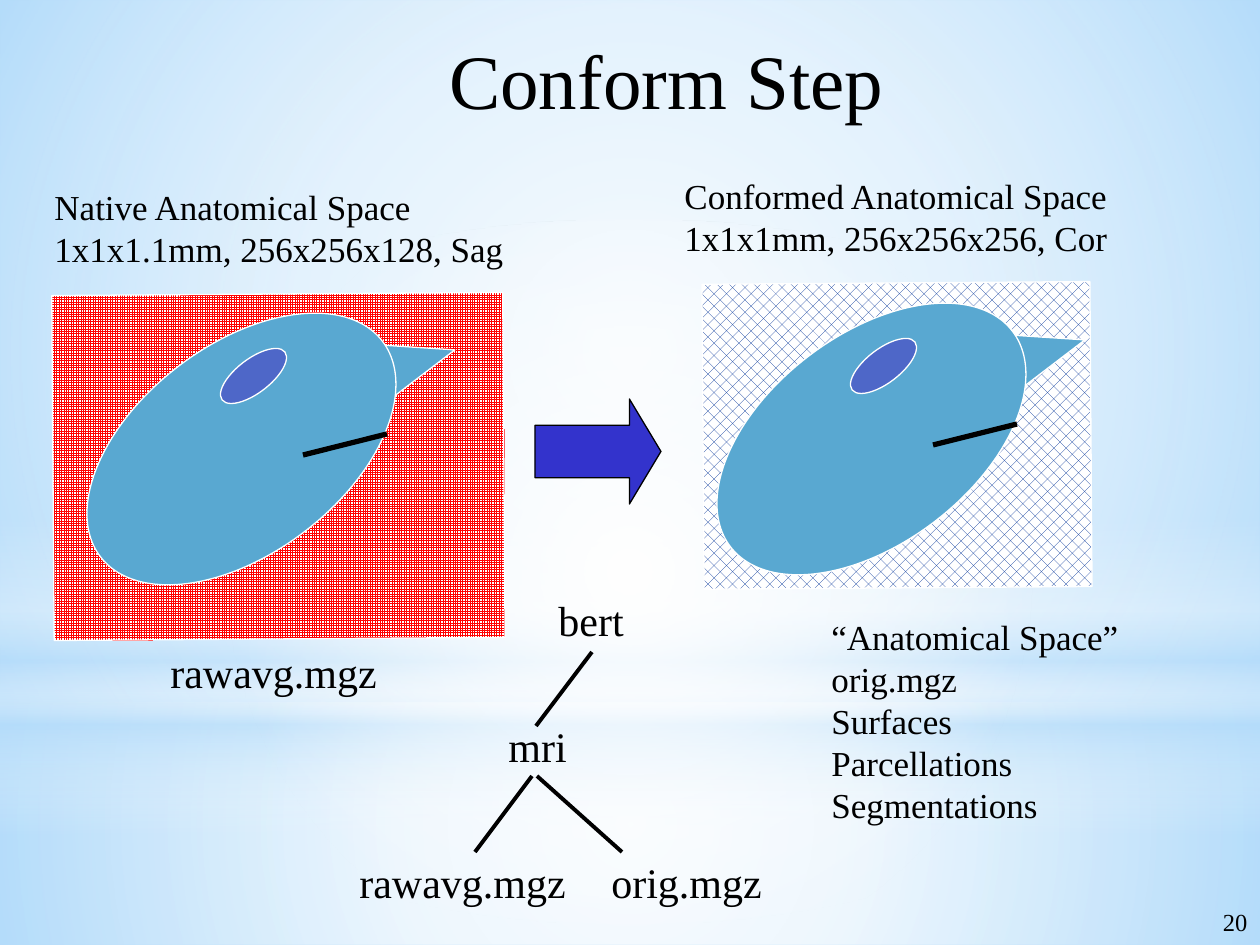
from lxml import etree
from pptx import Presentation
from pptx.dml.color import RGBColor
from pptx.enum.dml import MSO_PATTERN as Pattern
from pptx.enum.shapes import MSO_CONNECTOR as Connector, MSO_SHAPE as Shape
from pptx.enum.text import MSO_ANCHOR as Anchor, MSO_AUTO_SIZE as AutoSize, PP_ALIGN as Align
from pptx.oxml import parse_xml
from pptx.oxml.ns import nsdecls, qn
from pptx.util import Emu, Pt

FONT = "Times New Roman"
BLACK = RGBColor(0x00, 0x00, 0x00)
WHITE = RGBColor(0xFF, 0xFF, 0xFF)
SKY = RGBColor(0xB4, 0xDC, 0xFA)
RED = RGBColor(0xFF, 0x00, 0x00)
NAVY = RGBColor(0x00, 0x33, 0x99)
HEAD = RGBColor(0x59, 0xA8, 0xD1)
EYE = RGBColor(0x4E, 0x67, 0xC8)
ARROW = RGBColor(0x33, 0x33, 0xCC)

HEAD_TILT = 322.6
FRAME_TILT = 359.6
CIRCLE = ('<a:path path="circle"><a:fillToRect l="50000" t="50000" '
          'r="50000" b="50000"/></a:path>')
DOWNWARD = '<a:lin ang="5400000" scaled="0"/>'


def px(value):
    return Emu(round(value * 914400 / 126))


def box(*values):
    return [px(value) for value in values]


def add_plain_shape(shapes, kind, bounds, fill=None, line=None, rotation=0):
    shape = shapes.add_shape(kind, *box(*bounds))
    shape.shadow.inherit = False
    shape.rotation = rotation
    if fill is not None:
        shape.fill.solid()
        shape.fill.fore_color.rgb = fill
    if line is None:
        shape.line.fill.background()
    else:
        shape.line.color.rgb = line
        shape.line.width = Pt(0.75)
    return shape


def add_glow(slide, kind, bounds, stops, direction):
    shape = add_plain_shape(slide.shapes, kind, bounds)
    stop_xml = "".join(
        f'<a:gs pos="{position * 1000}"><a:srgbClr val="{color}">'
        f'<a:alpha val="{opacity * 1000}"/></a:srgbClr></a:gs>'
        for position, color, opacity in stops)
    gradient = parse_xml(f'<a:gradFill {nsdecls("a")} rotWithShape="1">'
                         f'<a:gsLst>{stop_xml}</a:gsLst>{direction}</a:gradFill>')
    shape._element.spPr.find(qn("a:prstGeom")).addnext(gradient)


def add_line(shapes, start, end, width, start_shape=None):
    line = shapes.add_connector(Connector.STRAIGHT, *box(*start, *end))
    line.line.color.rgb = BLACK
    line.line.width = Pt(width)
    etree.SubElement(line._element.spPr, qn("a:effectLst"))
    if start_shape is not None:
        line.begin_connect(start_shape, 2)


def add_text(slide, bounds, lines, size, align=Align.LEFT, wrap=True, grow=True,
             anchor=Anchor.TOP):
    text_box = slide.shapes.add_textbox(*box(*bounds))
    frame = text_box.text_frame
    frame.word_wrap = wrap
    frame.auto_size = AutoSize.SHAPE_TO_FIT_TEXT if grow else AutoSize.NONE
    frame.vertical_anchor = anchor
    for index, line in enumerate(lines):
        paragraph = frame.add_paragraph() if index else frame.paragraphs[0]
        paragraph.alignment = align
        run = paragraph.add_run()
        run.text = line
        run.font.name = FONT
        run.font.size = Pt(size)
        run.font.color.rgb = BLACK
    return text_box


def add_label(slide, bounds, text):
    return add_text(slide, bounds, [text], 24, wrap=False)


def add_volume(slide, frame_bounds, pattern, color, dx, dy):
    shapes = slide.shapes.add_group_shape().shapes
    frame = add_plain_shape(shapes, Shape.RECTANGLE, frame_bounds,
                            line=WHITE, rotation=FRAME_TILT)
    frame.fill.patterned()
    frame.fill.pattern = pattern
    frame.fill.fore_color.rgb = color
    frame.fill.back_color.rgb = WHITE
    for kind, (left, top, width, height), fill in (
            (Shape.RIGHT_TRIANGLE, (363, 312, 79, 69), HEAD),
            (Shape.OVAL, (64, 345, 355, 208), HEAD),
            (Shape.OVAL, (214, 359, 79, 34), EYE)):
        add_plain_shape(shapes, kind, (left + dx, top + dy, width, height),
                        fill, WHITE, HEAD_TILT)
    add_line(shapes, (303 + dx, 455 + dy), (387 + dx, 434 + dy), 3)


def add_backdrop(slide):
    slide.background.fill.solid()
    slide.background.fill.fore_color.rgb = SKY
    add_glow(slide, Shape.RECTANGLE, (0, 703, 1260, 242),
             [(0, WHITE, 91), (37, WHITE, 76), (100, SKY, 79)], CIRCLE)
    add_glow(slide, Shape.RECTANGLE, (0, 0, 1260, 703),
             [(0, WHITE, 89), (48, WHITE, 62), (100, SKY, 79)], CIRCLE)
    add_glow(slide, Shape.RECTANGLE, (0, 519, 1260, 315),
             [(0, WHITE, 0), (29, WHITE, 30), (45, SKY, 40),
              (55, WHITE, 26), (65, SKY, 60), (100, WHITE, 0)], DOWNWARD)
    add_glow(slide, Shape.OVAL, (0, 220, 1260, 703),
             [(0, WHITE, 100), (56, WHITE, 0)], CIRCLE)


def add_file_tree(slide):
    add_label(slide, (599, 850, 176, 64), "orig.mgz")
    add_label(slide, (496, 714, 84, 64), "mri")
    add_label(slide, (347, 850, 233, 64), "rawavg.mgz")
    bert = add_label(slide, (546, 588, 92, 64), "bert")
    add_line(slide.shapes, (592, 650), (536, 726), 2.25, bert)
    add_line(slide.shapes, (532, 776), (475, 852), 2.25)
    add_line(slide.shapes, (537, 776), (622, 852), 2.25)


def main():
    presentation = Presentation()
    presentation.slide_width, presentation.slide_height = box(1260, 945)
    slide = presentation.slides.add_slide(presentation.slide_layouts[6])
    add_backdrop(slide)

    add_volume(slide, (53, 294, 451, 345), Pattern.SMALL_GRID, RED, 0, 0)
    add_text(slide, (42, 179, 525, 97),
             ["Native Anatomical Space 1x1x1.1mm, 256x256x128, Sag"], 20)
    add_volume(slide, (703, 283, 388, 305), Pattern.PERCENT_30, NAVY, 630, -10)
    add_text(slide, (672, 168, 525, 97),
             ["Conformed Anatomical Space 1x1x1mm, 256x256x256, Cor"], 20)

    arrow = add_plain_shape(slide.shapes, Shape.RIGHT_ARROW, (535, 399, 126, 105),
                            ARROW, BLACK)
    arrow.adjustments[0] = 0.5
    arrow.adjustments[1] = 0.3

    add_text(slide, (819, 609, 315, 223),
             ["“Anatomical Space”", "orig.mgz", "Surfaces", "Parcellations",
              "Segmentations"], 20)
    add_text(slide, (136, 0, 1061, 158), ["Conform Step"], 44, Align.CENTER,
             grow=False, anchor=Anchor.MIDDLE)
    add_file_tree(slide)
    add_label(slide, (158, 640, 233, 64), "rawavg.mgz")
    add_text(slide, (998, 901, 262, 44), ["20"], 14, Align.RIGHT, grow=False)

    presentation.save("out.pptx")


if __name__ == "__main__":
    main()
